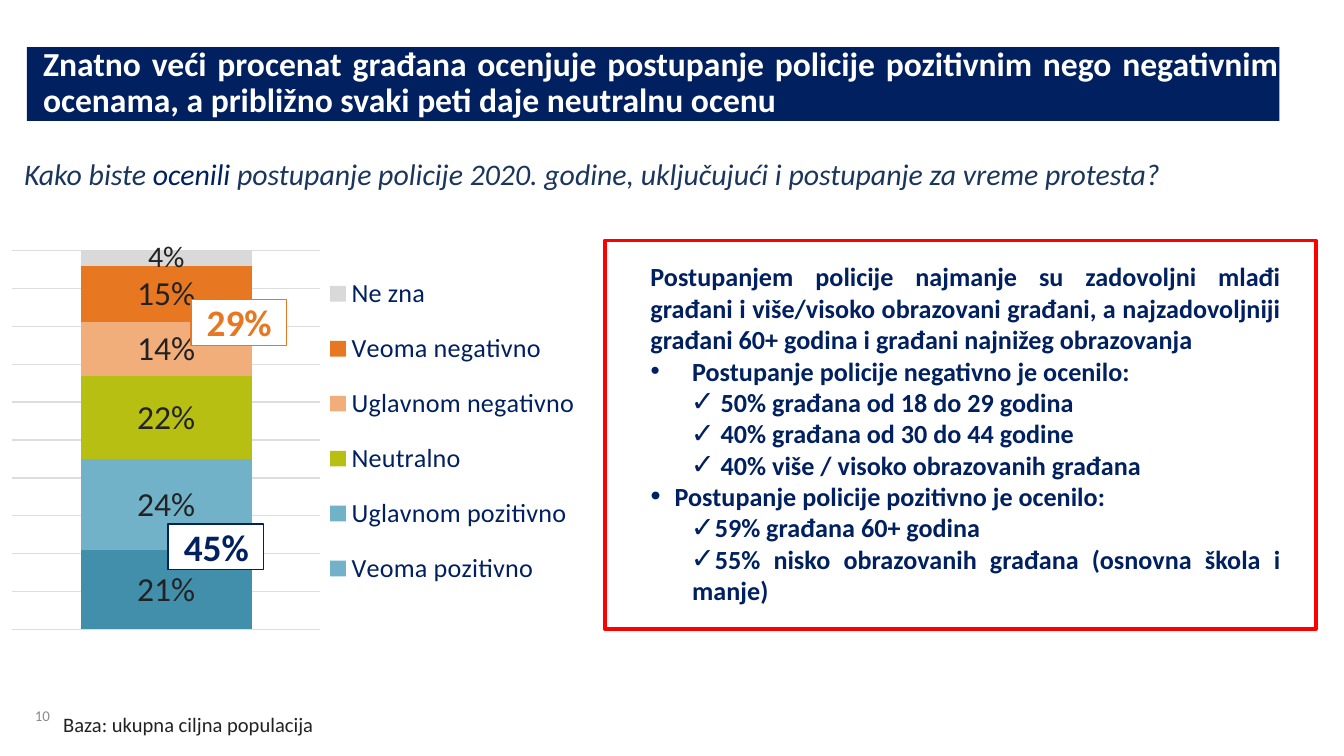
from lxml.etree import SubElement
from pptx import Presentation
from pptx.chart.data import CategoryChartData
from pptx.dml.color import RGBColor
from pptx.enum.chart import XL_CHART_TYPE as ChartType, XL_LABEL_POSITION as LabelPosition
from pptx.enum.chart import XL_LEGEND_POSITION as LegendPosition
from pptx.enum.shapes import MSO_SHAPE as Shape
from pptx.enum.text import MSO_ANCHOR as Anchor, MSO_AUTO_SIZE as AutoSize, PP_ALIGN as Align
from pptx.oxml.ns import qn
from pptx.util import Inches, Pt

FONT, NAVY, SLATE, INK = "Calibri", "002060", "1B365D", "222223"
ORANGE, GRID = "E87722", "DDDDDE"


def color(target, value):
    if hasattr(target, "solid"):
        target.solid()
        target = target.fore_color
    target.rgb = RGBColor.from_string(value)


def write(frame, text, size=14, ink=NAVY, bold=False, italic=False, align=Align.LEFT,
          left=0, first=0, bullet=None, bullet_size=100, spacing=1.0, inset=(0, 0),
          wrap=True, anchor=Anchor.TOP):
    frame.auto_size, frame.word_wrap, frame.vertical_anchor = AutoSize.NONE, wrap, anchor
    frame.margin_left = frame.margin_right = Inches(inset[0])
    frame.margin_top = frame.margin_bottom = Inches(inset[1])
    para = frame.add_paragraph() if frame.text else frame.paragraphs[0]
    para.alignment, para.line_spacing, para.space_before = align, spacing, Pt(0)
    for words, tone in [(text, ink)] if isinstance(text, str) else text:
        span = para.add_run()
        span.text = words
        span.font.name, span.font.size = FONT, Pt(size)
        span.font.bold, span.font.italic = bold, italic
        color(span.font.color, tone)
    props = para._p.get_or_add_pPr()
    props.set("marL", str(Inches(left)))
    props.set("indent", str(Inches(first)))
    if bullet:
        SubElement(props, qn("a:buSzPct"), val=str(bullet_size * 1000))
        SubElement(props, qn("a:buChar"), char=bullet)
    else:
        SubElement(props, qn("a:buNone"))


deck = Presentation()
deck.slide_width = Inches(10)
deck.slide_height = deck.slide_width * 9 // 16
page = deck.slides.add_slide(deck.slide_layouts[1])
title, findings = page.placeholders

title.left, title.top, title.width, title.height = map(Inches, (0.2, 0.35, 9.32, 0.55))
color(title.fill, NAVY)
write(title.text_frame,
      "Znatno veći procenat građana ocenjuje postupanje policije pozitivnim nego "
      "negativnim ocenama, a približno svaki peti daje neutralnu ocenu",
      size=18, ink="FFFFFF", bold=True, align=Align.JUSTIFY, left=0.12, spacing=0.9)

question = page.shapes.add_textbox(*map(Inches, (0.11, 0.95, 9.54, 0.52)))
write(question.text_frame,
      [("Kako biste ", SLATE), ("ocenili ", NAVY),
       ("postupanje policije 2020. godine, uključujući i postupanje za vreme protesta?", SLATE)],
      size=16, italic=True, spacing=0.9, inset=(0.07, 0.04), anchor=Anchor.BOTTOM)

ratings = [
    ("Veoma pozitivno", 21, "71B2C9"),
    ("Uglavnom pozitivno", 24, "71B2C9"),
    ("Neutralno", 22, "B7BF12"),
    ("Uglavnom negativno", 14, "F1AD7A"),
    ("Veoma negativno", 15, ORANGE),
    ("Ne zna", 4, "D9D9D9"),
]
data = CategoryChartData()
data.categories = ["1"]
for name, share, _ in ratings:
    data.add_series(name, [share])
chart = page.shapes.add_chart(ChartType.COLUMN_STACKED_100,
                              *map(Inches, (0, 1.7, 4.58, 3.28)), data).chart
chart.has_title = False
chart.font.name, chart.font.size = FONT, Pt(10)
color(chart.font.color, INK)
chart.category_axis.visible = chart.value_axis.visible = False
chart.value_axis.has_major_gridlines = True
gridline = chart.value_axis.major_gridlines.format.line
gridline.width = Pt(0.75)
color(gridline.fill, GRID)

chart.has_legend = True
legend = chart.legend
legend.position, legend.include_in_layout = LegendPosition.RIGHT, False
legend.font.name, legend.font.size = FONT, Pt(14)
color(legend.font.color, NAVY)

plot = chart.plots[0]
plot.gap_width, plot.overlap, plot.vary_by_categories = 80, 100, False
for series, (name, share, tone) in zip(plot.series, ratings):
    color(series.format.fill, tone)
    labels = series.data_labels
    labels.show_value, labels.position = True, LabelPosition.CENTER
    labels.number_format, labels.number_format_is_linked = "0\\%", False
    labels.font.name, labels.font.size = FONT, Pt(16 if name == "Ne zna" else 18)
    color(labels.font.color, INK)
color(plot.series[0].points[0].format.fill, "418FAB")

chart_root = chart._chartSpace.chart
for part, slot, target, bounds in [
    (chart_root.plotArea, 0, "inner", (0.02, 0.05, 0.5, 0.86)),
    (chart_root.find(qn("c:legend")), 1, None, (0.52, 0.06, 0.43, 0.8)),
]:
    for old in part.findall(qn("c:layout")):
        part.remove(old)
    layout = SubElement(part, qn("c:layout"))
    part.insert(slot, layout)
    manual = SubElement(layout, qn("c:manualLayout"))
    if target:
        SubElement(manual, qn("c:layoutTarget"), val=target)
    for tag, value in zip(("xMode", "yMode", "x", "y", "w", "h"), ("edge", "edge", *bounds)):
        SubElement(manual, qn(f"c:{tag}"), val=str(value))

for total, left, top, tone in [("29%", 1.42, 2.23, ORANGE), ("45%", 1.25, 3.9, NAVY)]:
    box = page.shapes.add_shape(Shape.RECTANGLE, *map(Inches, (left, top, 0.71, 0.34)))
    box.shadow.inherit = False
    color(box.fill, "FFFFFF")
    color(box.line.fill, tone)
    box.line.width = Pt(0.75)
    write(box.text_frame, total, size=20, ink=tone, bold=True, align=Align.CENTER, left=0.01)

frame_box = page.shapes.add_shape(Shape.RECTANGLE, *map(Inches, (4.5, 1.79, 5.29, 2.89)))
frame_box.shadow.inherit = False
frame_box.fill.background()
color(frame_box.line.fill, "FF0000")
frame_box.line.width = Pt(2)

findings.left, findings.top, findings.width, findings.height = map(Inches, (4.83, 1.94, 4.7, 2.59))
intro = dict(left=0.01)
check = dict(left=0.32, first=-0.01, bullet="✓", bullet_size=110)
for text, style in [
    ("Postupanjem policije najmanje su zadovoljni mlađi građani i više/visoko obrazovani "
     "građani, a najzadovoljniji građani 60+ godina i građani najnižeg obrazovanja", intro),
    ("Postupanje policije negativno je ocenilo:", dict(left=0.32, first=-0.31, bullet="•")),
    (" 50% građana od 18 do 29 godina", check),
    (" 40% građana od 30 do 44 godine", check),
    (" 40% više / visoko obrazovanih građana", check),
    ("Postupanje policije pozitivno je ocenilo:",
     dict(left=0.19, first=-0.18, bullet="•", bullet_size=110)),
    ("59% građana 60+ godina", check),
    ("55% nisko obrazovanih građana (osnovna škola i manje)", check),
]:
    write(findings.text_frame, text, bold=True, align=Align.JUSTIFY, **style)

base = page.shapes.add_textbox(*map(Inches, (0.46, 5.3, 1.88, 0.19)))
write(base.text_frame, "Baza: ukupna ciljna populacija", size=11, ink=INK, left=0.01, wrap=False)
number = page.shapes.add_textbox(*map(Inches, (0.26, 5.13, 0.34, 0.26)))
write(number.text_frame, "10", size=8, ink="888B8D", spacing=0.85, wrap=False, anchor=Anchor.BOTTOM)

deck.save("out.pptx")
